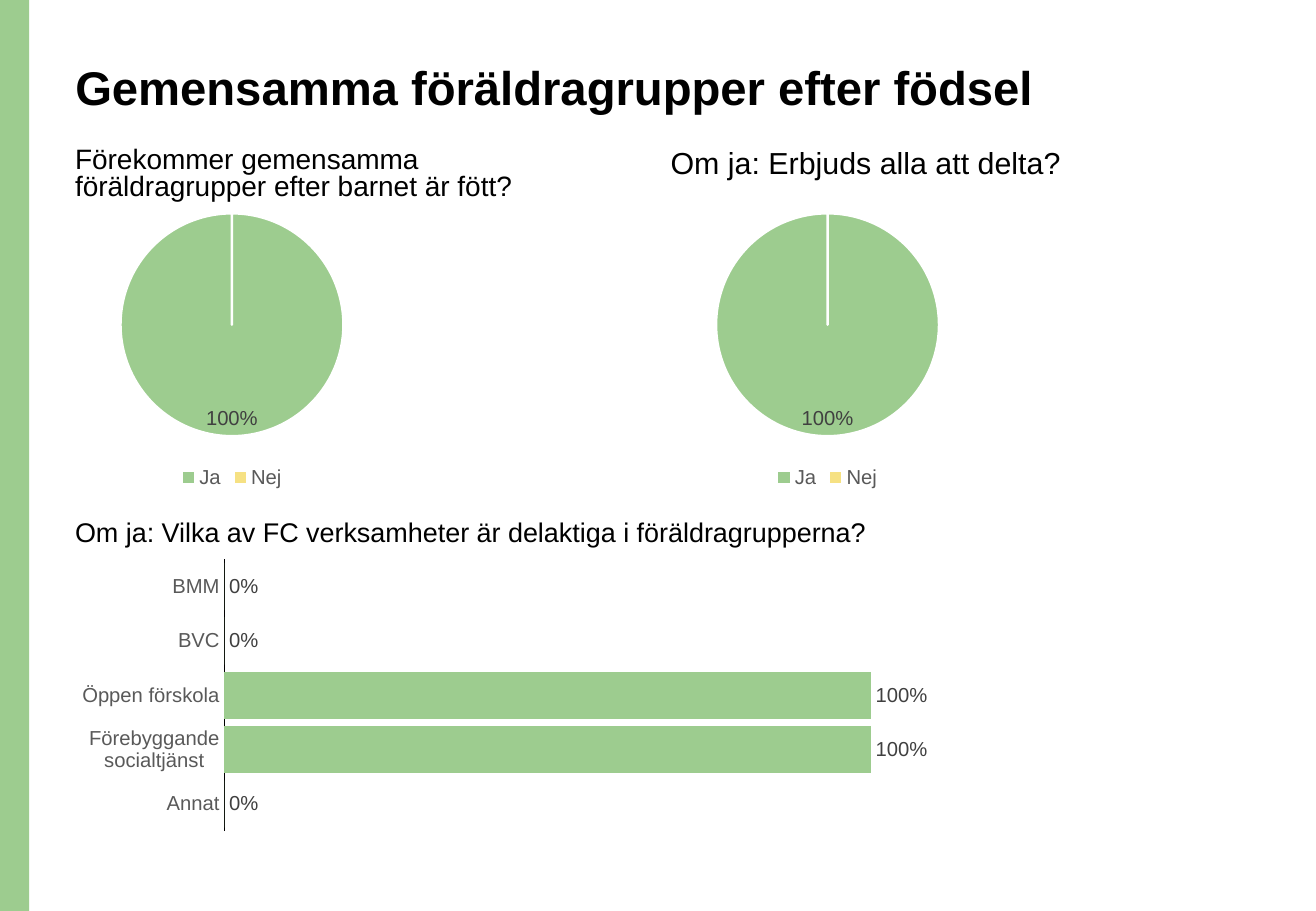
"""Build the slide on shared parent groups after birth."""
from pptx import Presentation
from pptx import util as u
from pptx.chart.data import CategoryChartData
from pptx.dml.color import RGBColor
from pptx.enum import chart as charts, shapes, text

GREEN, YELLOW, WHITE, BLACK = "9DCC8F", "F6E183", "FFFFFF", "000000"
LABEL_GREY, AXIS_GREY = "404040", "595959"
LEFT, RIGHT = 1.32, 13.77


def style(font, size, color, bold=False):
    """Apply size, colour and weight to a font."""
    values = {"name": "Arial", "size": u.Pt(size), "bold": bold}
    for name, value in values.items():
        setattr(font, name, value)
    font.color.rgb = RGBColor.from_string(color)


def add_chart(kind, place, categories, values, number_format, position):
    """Add a chart of one labelled series and return it."""
    data = CategoryChartData(number_format="0%")
    data.categories = categories
    data.add_series("Series 1", values)
    chart = page.shapes.add_chart(kind, *map(u.Cm, place), data).chart
    chart.has_title = False
    style(chart.font, 10, BLACK)
    plot = chart.plots[0]
    plot.vary_by_categories = False
    plot.has_data_labels = True
    settings = {"show_value": True, "show_percentage": False, "position": position,
                "number_format": number_format, "number_format_is_linked": False}
    for name, value in settings.items():
        setattr(plot.data_labels, name, value)
    style(plot.data_labels.font, 12, LABEL_GREY)
    return chart


deck = Presentation()
deck.slide_width, deck.slide_height = u.Cm(27.51), u.Cm(19.05)
page = deck.slides.add_slide(deck.slide_layouts[5])

band = page.shapes.add_shape(shapes.MSO_SHAPE.RECTANGLE, 0, 0, u.Cm(0.61), deck.slide_height)
band.shadow.inherit = False
band.fill.solid()
band.fill.fore_color.rgb = RGBColor.from_string(GREEN)
band.line.fill.background()

title = page.shapes.title
title.left, title.top, title.width, title.height = map(u.Cm, (LEFT, 1.22, 23.72, 2.59))
headings = [
    (title, "Gemensamma föräldragrupper efter födsel", 28, 0.9, True),
]
questions = [
    ((LEFT, 2.97, 10.49, 1.45), "Förekommer gemensamma föräldragrupper efter barnet är fött?", 16.6, 0.8),
    ((RIGHT, 2.97, 10.49, 1.45), "Om ja: Erbjuds alla att delta?", 18, 0.9),
    ((LEFT, 10.74, 20.65, 1.6), "Om ja: Vilka av FC verksamheter är delaktiga i föräldragrupperna?", 16, 0.9),
]
for place, wording, size, spacing in questions:
    box = page.shapes.add_textbox(*map(u.Cm, place))
    headings.append((box, wording, size, spacing, False))

for box, wording, size, spacing, bold in headings:
    frame = box.text_frame
    frame.word_wrap = True
    frame.auto_size = text.MSO_AUTO_SIZE.NONE
    frame.vertical_anchor = text.MSO_ANCHOR.TOP
    para = frame.paragraphs[0]
    para.alignment = text.PP_ALIGN.LEFT
    para.line_spacing = spacing
    span = para.add_run()
    span.text = wording
    style(span.font, size, BLACK, bold)

for left in (LEFT, RIGHT):
    pie = add_chart(charts.XL_CHART_TYPE.PIE, (left, 4.11, 7.06, 6.2), ["Ja", "Nej"], [1, 0],
                    "0%;;", charts.XL_LABEL_POSITION.INSIDE_END)
    pie.has_legend = True
    pie.legend.position = charts.XL_LEGEND_POSITION.BOTTOM
    pie.legend.include_in_layout = False
    style(pie.legend.font, 12, AXIS_GREY)
    for index, color in enumerate((GREEN, YELLOW)):
        slice_format = pie.plots[0].series[0].points[index].format
        slice_format.fill.solid()
        slice_format.fill.fore_color.rgb = RGBColor.from_string(color)
        slice_format.line.color.rgb = RGBColor.from_string(WHITE)
        slice_format.line.width = u.Pt(1.5)

services = ["BMM", "BVC", "Öppen förskola", "Förebyggande socialtjänst", "Annat"]
bars = add_chart(charts.XL_CHART_TYPE.BAR_CLUSTERED, (LEFT, 11.58, 19.99, 5.92), services,
                 [0, 0, 1, 1, 0], "0%", charts.XL_LABEL_POSITION.OUTSIDE_END)
bars.has_legend = False
bars.plots[0].gap_width = 15
fill = bars.plots[0].series[0].format.fill
fill.solid()
fill.fore_color.rgb = RGBColor.from_string(GREEN)

service_axis, share_axis = bars.category_axis, bars.value_axis
service_axis.reverse_order = True
service_axis.major_tick_mark = charts.XL_TICK_MARK.NONE
service_axis.format.line.color.rgb = RGBColor.from_string(BLACK)
service_axis.format.line.width = u.Pt(0.75)
style(service_axis.tick_labels.font, 12, AXIS_GREY)
share_axis.minimum_scale, share_axis.maximum_scale = 0, 1.2
share_axis.has_major_gridlines = False
share_axis.visible = False

deck.save("out.pptx")
